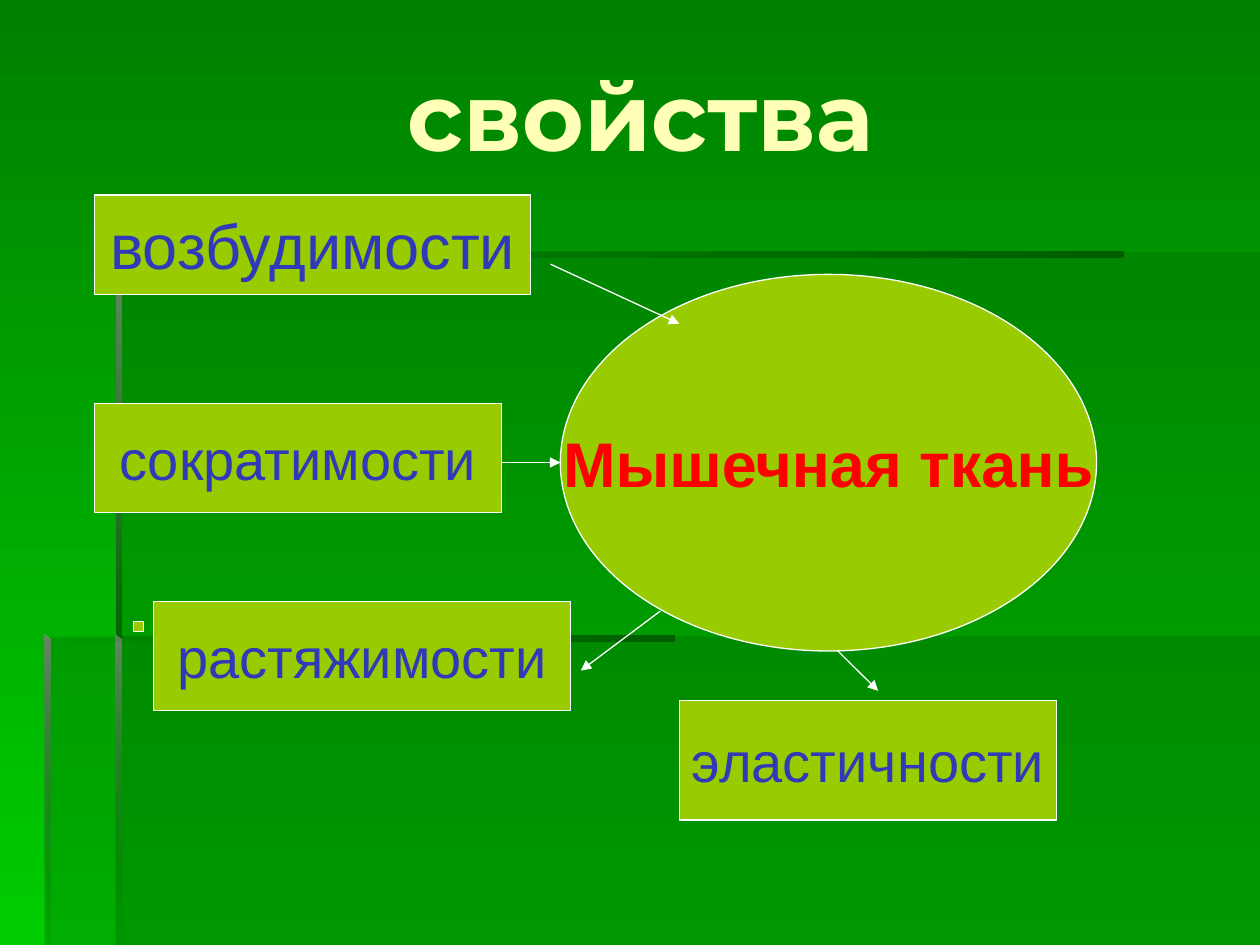
from lxml import etree
from pptx import Presentation
from pptx.dml.color import RGBColor
from pptx.enum.shapes import MSO_CONNECTOR, MSO_SHAPE
from pptx.enum.text import MSO_ANCHOR, PP_ALIGN
from pptx.oxml.ns import qn
from pptx.util import Pt

RECT, OVAL = MSO_SHAPE.RECTANGLE, MSO_SHAPE.OVAL
LINE = MSO_CONNECTOR.STRAIGHT
MIDDLE, CENTER = MSO_ANCHOR.MIDDLE, PP_ALIGN.CENTER
COLORS = {
    "top": "008000", "base": "00CC00", "panel": "006600", "dark": "005E00",
    "pale": "668666", "lime": "99CC00", "white": "FFFFFF",
    "title": "FFFFB7", "blue": "303AB8", "red": "FF0000",
}


class Deck:
    """Draw styled elements on one slide, with lengths in points."""

    def __init__(self, slide):
        self.slide = slide
        self.shapes = slide.shapes

    def color(self, name):
        return RGBColor.from_string(COLORS[name])

    def fade(self, parent, alpha):
        for node in parent.iter(qn("a:srgbClr")):
            etree.SubElement(node, qn("a:alpha"), val=str(alpha * 1000))

    def blend(self, fill, names, angle):
        fill.gradient()
        fill.gradient_angle = angle
        for stop, name in zip(fill.gradient_stops, names):
            stop.color.rgb = self.color(name)

    def outline(self, points):
        first, *rest = [(Pt(x), Pt(y)) for x, y in points]
        pen = self.shapes.build_freeform(*first)
        pen.add_line_segments(rest, close=True)
        shape = pen.convert_to_shape()
        shape.shadow.inherit = False
        shape.line.fill.background()
        return shape

    def panel(self, points):
        shape = self.outline(points)
        shape.fill.solid()
        shape.fill.fore_color.rgb = self.color("panel")
        self.fade(shape.element.spPr, 30)

    def bar(self, points, names, angle, clear=None, alpha=0):
        shape = self.outline(points)
        self.blend(shape.fill, names, angle)
        if clear is not None:
            stops = list(shape.element.spPr.iter(qn("a:gs")))
            self.fade(stops[clear], alpha)

    def across(self, left, top, right):
        low = top + 3.6
        points = [(left, top), (left, low), (right, low), (right, top)]
        self.bar(points, ("panel", "dark"), 0, clear=0)

    def down(self, left, top, bottom, clear=None, alpha=0):
        right = left + 3.9
        points = [(left, top), (left, bottom), (right, bottom), (right, top + 3.3)]
        self.bar(points, ("pale", "panel"), 270, clear, alpha)

    def label(self, shape, text, size, color, font="Arial", bold=False, wrap=False):
        frame = shape.text_frame
        frame.word_wrap = wrap
        frame.vertical_anchor = MIDDLE
        para = frame.paragraphs[0]
        para.text = text
        para.alignment = CENTER
        para.font.name = font
        para.font.size = Pt(size)
        para.font.bold = bold
        para.font.color.rgb = self.color(color)

    def title(self, box, text):
        shape = self.shapes.add_textbox(*map(Pt, box))
        self.label(shape, text, 54, "title", "Montserrat", True, True)

    def block(self, kind, box):
        shape = self.shapes.add_shape(kind, *map(Pt, box))
        shape.shadow.inherit = False
        shape.fill.solid()
        shape.fill.fore_color.rgb = self.color("lime")
        shape.line.color.rgb = self.color("white")
        shape.line.width = Pt(0.75)
        return shape

    def arrow(self, *ends):
        link = self.shapes.add_connector(LINE, *map(Pt, ends))
        link.line.color.rgb = self.color("white")
        link.line.width = Pt(0.75)
        props = link.element.spPr
        etree.SubElement(props.find(qn("a:ln")), qn("a:tailEnd"), type="triangle")
        etree.SubElement(props, qn("a:effectLst"))


def main():
    show = Presentation()
    show.slide_width, show.slide_height = Pt(720), Pt(540)
    deck = Deck(show.slides.add_slide(show.slide_layouts[6]))
    deck.blend(deck.slide.background.fill, ("top", "base"), 270)

    deck.panel([(66.2, 363.6), (66.2, 540), (720, 540), (720, 363.6)])
    deck.panel([(67.7, 364.3), (25.9, 364.3), (25.9, 540),
                (720, 540), (720, 144), (67.7, 144)])
    deck.across(66.2, 143.7, 642)
    deck.down(66.2, 144, 367.2)
    deck.down(65.8, 362.9, 540, clear=1)
    deck.across(25.2, 362.9, 385.2)
    deck.down(25.2, 362.9, 540, clear=1, alpha=10)

    deck.title((36, 19.4, 660.2, 90.7), "свойства")
    tissue = deck.block(OVAL, (320.2, 156.8, 306.4, 215.2))
    deck.label(tissue, "Мышечная ткань", 36, "red", bold=True)
    deck.block(RECT, (76.2, 355, 5.8, 5.8))
    for text, size, box in (
        ("возбудимости", 36, (54, 111.4, 249.4, 56.8)),
        ("сократимости", 32, (54, 230.4, 232.6, 62.4)),
        ("растяжимости", 32, (87.8, 343.7, 238.3, 62.3)),
        ("эластичности", 32, (388.4, 400.3, 215.4, 68.3)),
    ):
        deck.label(deck.block(RECT, box), text, size, "blue")

    for ends in (
        (478.8, 372, 501.8, 394.8),
        (377.3, 349.2, 331.9, 383.2),
        (314.6, 151, 388.2, 185),
        (286.6, 264.3, 320.2, 264.3),
    ):
        deck.arrow(*ends)
    show.save("out.pptx")


if __name__ == "__main__":
    main()
